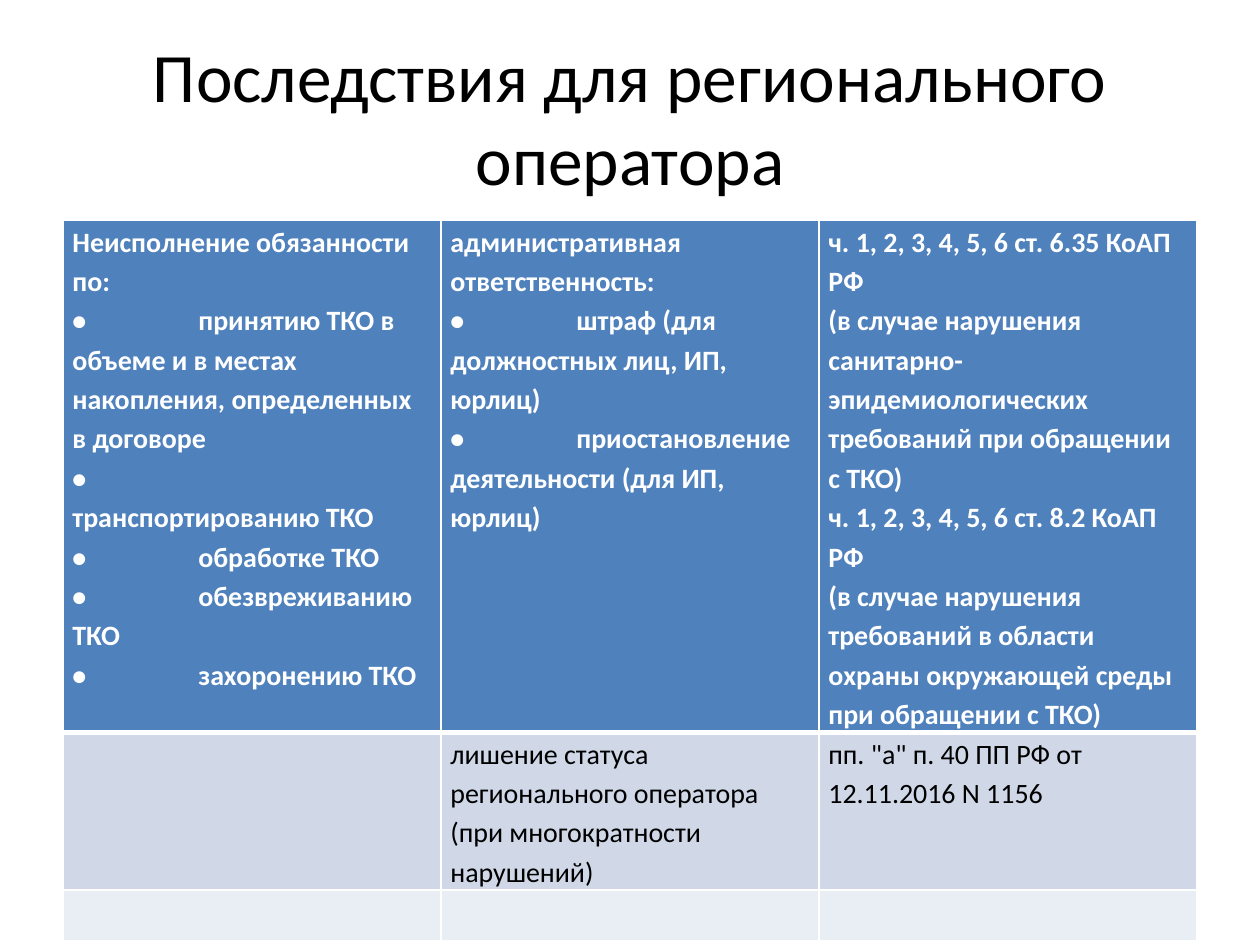
"""Build a slide on the consequences for a regional waste operator."""
import dataclasses

import lxml.etree
import pptx
import pptx.dml.color
import pptx.enum.text
import pptx.oxml.ns
import pptx.util

Pt = pptx.util.Pt
qn = pptx.oxml.ns.qn


@dataclasses.dataclass(frozen=True)
class Theme:
    """Colours and type sizes of the slide."""
    font: str = "Calibri"
    title_size: float = 39.6
    body_size: float = 16
    dark: str = "000000"
    light: str = "FFFFFF"
    row_fills: tuple = ("4F81BD", "D0D8E8", "E9EDF4")


THEME = Theme()
ROW_HEIGHTS = (292.5, 90, 29)
HEADING = "Последствия для регионального оператора"
CONSEQUENCES = [
    [
        [
            "Неисполнение обязанности по:",
            "•\tпринятию ТКО в объеме и в местах накопления, определенных в договоре",
            "•\tтранспортированию ТКО",
            "•\tобработке ТКО",
            "•\tобезвреживанию ТКО",
            "•\tзахоронению ТКО",
        ],
        [
            "административная ответственность:",
            "•\tштраф (для должностных лиц, ИП, юрлиц)",
            "•\tприостановление деятельности (для ИП, юрлиц)",
        ],
        [
            "ч. 1, 2, 3, 4, 5, 6 ст. 6.35 КоАП РФ",
            "(в случае нарушения санитарно-эпидемиологических требований при обращении с ТКО)",
            "ч. 1, 2, 3, 4, 5, 6 ст. 8.2 КоАП РФ",
            "(в случае нарушения требований в области охраны окружающей среды при обращении с ТКО)",
        ],
    ],
    [
        [],
        ["лишение статуса регионального оператора", "(при многократности нарушений)"],
        ['пп. "а" п. 40 ПП РФ от 12.11.2016 N 1156'],
    ],
    [[], [], []],
]


def rgb(value):
    """Return a colour from its hex value."""
    return pptx.dml.color.RGBColor.from_string(value)


def style_text(frame, size, colour, bold=False):
    """Format every run in a text frame."""
    for paragraph in frame.paragraphs:
        for run in paragraph.runs:
            run.font.name = THEME.font
            run.font.size = Pt(size)
            run.font.bold = bold
            run.font.color.rgb = rgb(colour)


def add_heading(slide):
    """Add the centred slide heading."""
    heading = slide.shapes.add_textbox(Pt(36), Pt(21.6), Pt(648), Pt(90)).text_frame
    heading.word_wrap = True
    heading.vertical_anchor = pptx.enum.text.MSO_ANCHOR.MIDDLE
    heading.text = HEADING
    heading.paragraphs[0].alignment = pptx.enum.text.PP_ALIGN.CENTER
    style_text(heading, THEME.title_size, THEME.dark)


def set_tab_stop(paragraph, position):
    """Give a paragraph one left tab stop."""
    properties = paragraph._p.get_or_add_pPr()
    stops = lxml.etree.SubElement(properties, qn("a:tabLst"))
    lxml.etree.SubElement(stops, qn("a:tab"), pos=str(Pt(position)), algn="l")


def set_borders(cell, widths):
    """Draw the cell edges, given as left, right, top and bottom widths."""
    properties = cell._tc.get_or_add_tcPr()
    for position, (side, width) in enumerate(zip("LRTB", widths)):
        edge = lxml.etree.Element(qn(f"a:ln{side}"), w=str(Pt(width)))
        paint = lxml.etree.SubElement(edge, qn("a:solidFill"))
        lxml.etree.SubElement(paint, qn("a:srgbClr"), val=THEME.light)
        properties.insert(position, edge)


def fill_cell(cell, lines, fill, colour, bold):
    """Fill one table cell with its colour and paragraphs."""
    cell.fill.solid()
    cell.fill.fore_color.rgb = rgb(fill)
    if not lines:
        return
    cell.margin_left = cell.margin_right = Pt(5.4)
    cell.margin_top = cell.margin_bottom = Pt(0)
    cell.text_frame.text = "\n".join(lines)
    for paragraph in cell.text_frame.paragraphs:
        paragraph.line_spacing = 1.15
        if "\t" in paragraph.text:
            set_tab_stop(paragraph, 72)
    style_text(cell.text_frame, THEME.body_size, colour, bold)


def add_consequences(slide):
    """Add the table of breaches, sanctions and legal grounds."""
    consequences = slide.shapes.add_table(
        3, 3, Pt(36), Pt(126), Pt(648), Pt(sum(ROW_HEIGHTS))
    ).table
    for row_index, (entries, fill) in enumerate(zip(CONSEQUENCES, THEME.row_fills)):
        consequences.rows[row_index].height = Pt(ROW_HEIGHTS[row_index])
        is_header = row_index == 0
        colour = THEME.light if is_header else THEME.dark
        top = 3 if row_index == 1 else 1
        bottom = 3 if is_header else 1
        for column_index, lines in enumerate(entries):
            cell = consequences.cell(row_index, column_index)
            fill_cell(cell, lines, fill, colour, is_header)
            set_borders(cell, (1, 1, top, bottom))


def main():
    """Create and save the presentation."""
    deck = pptx.Presentation()
    deck.slide_width, deck.slide_height = Pt(720), Pt(540)
    slide = deck.slides.add_slide(deck.slide_layouts[6])
    add_heading(slide)
    add_consequences(slide)
    deck.save("out.pptx")


if __name__ == "__main__":
    main()
